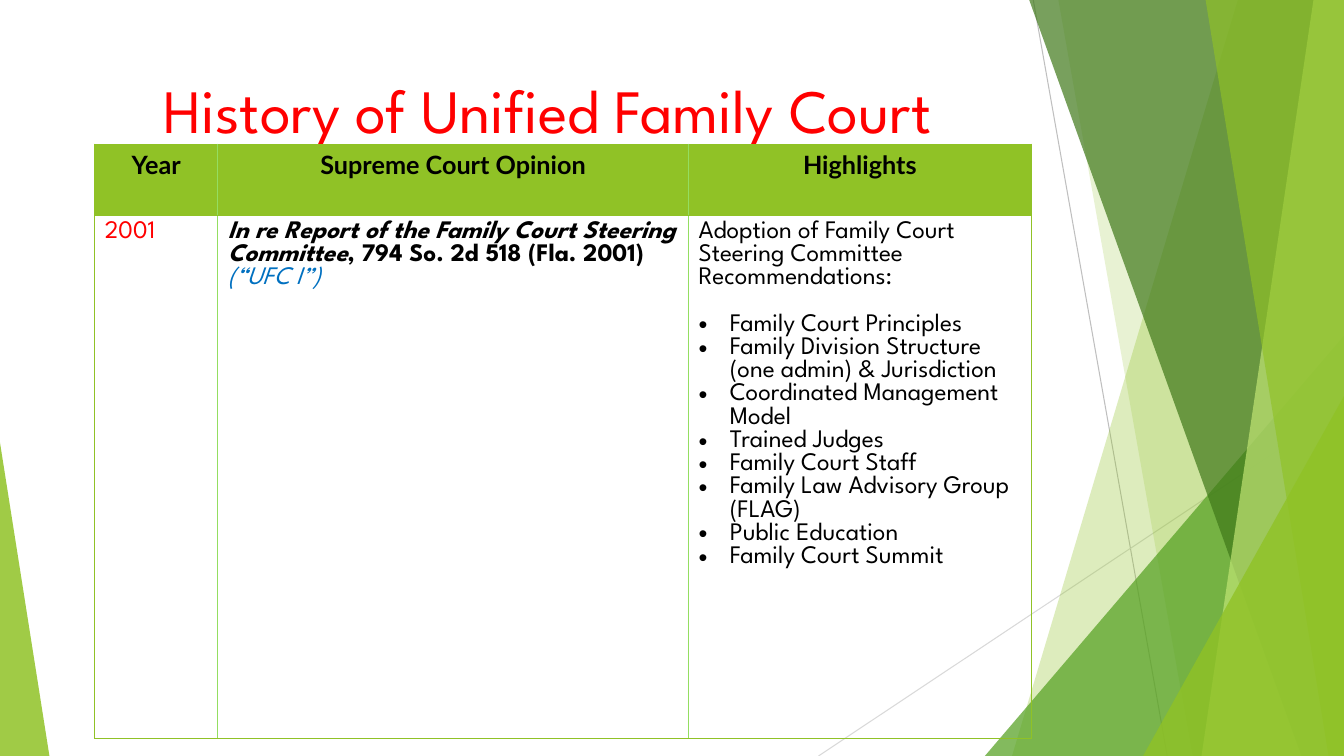
from dataclasses import dataclass

from lxml.etree import SubElement
from pptx import Presentation
from pptx.dml.color import RGBColor
from pptx.enum.shapes import MSO_CONNECTOR as Connector, MSO_SHAPE as Preset
from pptx.enum.text import MSO_ANCHOR as Anchor, MSO_AUTO_SIZE as AutoSize, PP_ALIGN as Align
from pptx.oxml.ns import qn
from pptx.util import Emu, Inches, Pt

WIDTH, HEIGHT = Inches(13.33), Inches(7.5)
LEAF, LIME, MOSS, FOREST, PALE = "90C226", "94DE61", "54A021", "3F7819", "C0E474"
BLACK, RED, BLUE = "000000", "FF0000", "0070C0"
SPARTAN, LATO = "League Spartan", "Lato"


def across(percent: float) -> Emu:
    return Emu(round(WIDTH * percent / 100))


def down(percent: float) -> Emu:
    return Emu(round(HEIGHT * percent / 100))


def colour(value: str) -> RGBColor:
    return RGBColor.from_string(value)


# Positions below are percentages of the slide's width and height
@dataclass
class Ray:
    start: tuple[float, float]
    end: tuple[float, float]
    tint: str


@dataclass
class Facet:
    """Band from its slanted left edge to the right edge of the slide."""
    top: float
    bottom: float
    tint: str
    opacity: int


@dataclass
class Wedge:
    left: float
    top: float
    width: float
    apex: int
    tint: str
    opacity: int


@dataclass
class Phrase:
    text: str
    tint: str = BLACK
    font: str = SPARTAN
    size: float = 18
    bold: bool = False
    italic: bool = False


@dataclass
class Line:
    phrases: list[Phrase]
    align: Align = Align.LEFT
    bullet: bool = False
    gap: float = 0


BACKDROP = [
    Ray((76.88, 0), (86.85, 100), "BFBFBF"),
    Ray((100, 53.73), (60.9, 100), "D9D9D9"),
    Facet(92.1, 75.3, LEAF, 30),
    Facet(78.75, 88.73, LEAF, 20),
    Wedge(73.28, 44.4, 26.72, 1, MOSS, 72),
    Facet(76.58, 96.83, FOREST, 70),
    Facet(97.73, 89.4, PALE, 70),
    Facet(89.7, 98.85, LEAF, 65),
    Wedge(85.05, 52.4, 14.95, 1, LEAF, 80),
    Wedge(0, 58.53, 3.68, 0, LEAF, 85),
]

HEADINGS = ["Year", "Supreme Court Opinion", "Highlights"]
RECOMMENDATIONS = [
    "Family Court Principles",
    "Family Division Structure (one admin) & Jurisdiction",
    "Coordinated Management Model",
    "Trained Judges",
    "Family Court Staff",
    "Family Law Advisory Group (FLAG)",
    "Public Education",
    "Family Court Summit",
]
OPINION = [
    Phrase("In re Report of the Family Court Steering Committee", bold=True, italic=True),
    Phrase(", 794 So. 2d 518 (Fla. 2001) ", bold=True),
    Phrase("(“UFC I”)", BLUE, italic=True),
]
HISTORY = [
    [[Line([Phrase(name, font=LATO, bold=True)], Align.CENTER)] for name in HEADINGS],
    [
        [Line([Phrase("2001", RED)])],
        [Line(OPINION)],
        [Line([Phrase("Adoption of Family Court Steering Committee")]),
         Line([Phrase("Recommendations:")], gap=16.56),
         *[Line([Phrase(item)], bullet=True) for item in RECOMMENDATIONS]],
    ],
]
COLUMNS, ROWS = [9.15, 35.03, 25.5], [9.47, 69.2]


def draw_ray(slide, ray: Ray) -> None:
    beam = slide.shapes.add_connector(
        Connector.STRAIGHT, across(ray.start[0]), down(ray.start[1]),
        across(ray.end[0]), down(ray.end[1]))
    beam.line.color.rgb = colour(ray.tint)
    beam.line.width = Pt(0.75)
    SubElement(beam.element.spPr, qn("a:effectLst"))


def tint_glass(pane, tint: str, opacity: int) -> None:
    pane.shadow.inherit = False
    pane.line.fill.background()
    pane.fill.solid()
    pane.fill.fore_color.rgb = colour(tint)
    shade = pane.element.spPr.find(qn("a:solidFill")).find(qn("a:srgbClr"))
    SubElement(shade, qn("a:alpha"), val=str(opacity * 1000))


def draw_facet(slide, facet: Facet) -> None:
    outline = slide.shapes.build_freeform(across(facet.top), 0)
    corners = [(100, 0), (100, 100), (facet.bottom, 100)]
    outline.add_line_segments([(across(x), down(y)) for x, y in corners], close=True)
    tint_glass(outline.convert_to_shape(), facet.tint, facet.opacity)


def draw_wedge(slide, wedge: Wedge) -> None:
    pane = slide.shapes.add_shape(
        Preset.ISOSCELES_TRIANGLE, across(wedge.left), down(wedge.top),
        across(wedge.width), down(100 - wedge.top))
    pane.adjustments[0] = wedge.apex
    tint_glass(pane, wedge.tint, wedge.opacity)


def write(frame, lines: list[Line]) -> None:
    for index, line in enumerate(lines):
        paragraph = frame.add_paragraph() if index else frame.paragraphs[0]
        paragraph.alignment = line.align
        paragraph.space_after = Pt(line.gap)
        if line.bullet:
            indent = Inches(0.31)
            properties = paragraph._p.get_or_add_pPr()
            properties.set("marL", str(indent))
            properties.set("indent", str(-indent))
            SubElement(properties, qn("a:buFont"), typeface="Arial")
            SubElement(properties, qn("a:buChar"), char="•")
        for phrase in line.phrases:
            run = paragraph.add_run()
            run.text = phrase.text
            look = {"name": phrase.font, "size": Pt(phrase.size),
                    "bold": phrase.bold, "italic": phrase.italic}
            for attribute, value in look.items():
                setattr(run.font, attribute, value)
            run.font.color.rgb = colour(phrase.tint)


def edge_cell(cell, column: int) -> None:
    edges = {"L": LIME if column else LEAF,
             "R": LEAF if column == len(COLUMNS) - 1 else LIME,
             "T": LEAF, "B": LEAF}
    properties = cell._tc.get_or_add_tcPr()
    for side, tint in edges.items():
        border = SubElement(properties, qn(f"a:ln{side}"), w=str(Pt(1)))
        SubElement(SubElement(border, qn("a:solidFill")), qn("a:srgbClr"), val=tint)


def draw_history(slide) -> None:
    table = slide.shapes.add_table(
        len(ROWS), len(COLUMNS), across(7.05), down(19.07),
        across(sum(COLUMNS)), down(sum(ROWS))).table
    table.first_row = table.horz_banding = False
    for column, share in zip(table.columns, COLUMNS):
        column.width = across(share)
    for row, share in zip(table.rows, ROWS):
        row.height = down(share)
    for r, entries in enumerate(HISTORY):
        for c, lines in enumerate(entries):
            cell = table.cell(r, c)
            edge_cell(cell, c)
            if r == 0:
                cell.fill.solid()
                cell.fill.fore_color.rgb = colour(LEAF)
            else:
                cell.fill.background()
            write(cell.text_frame, lines)


def place_title(slide) -> None:
    title = slide.shapes.title
    place = {"left": across(5.55), "top": down(6.27), "width": across(70.5), "height": down(16.93)}
    for attribute, value in place.items():
        setattr(title, attribute, value)
    layout = {"auto_size": AutoSize.NONE, "word_wrap": True,
              "vertical_anchor": Anchor.TOP, "margin_top": Inches(0.24)}
    for attribute, value in layout.items():
        setattr(title.text_frame, attribute, value)
    write(title.text_frame,
          [Line([Phrase("History of Unified Family Court", RED, size=44)], Align.CENTER)])
    # Bring the title in front of the backdrop
    title.element.getparent().append(title.element)


def main() -> None:
    deck = Presentation()
    deck.slide_width, deck.slide_height = WIDTH, HEIGHT
    slide = deck.slides.add_slide(deck.slide_layouts[5])
    painters = {Ray: draw_ray, Facet: draw_facet, Wedge: draw_wedge}
    for part in BACKDROP:
        painters[type(part)](slide, part)
    place_title(slide)
    draw_history(slide)
    deck.save("out.pptx")


if __name__ == "__main__":
    main()
